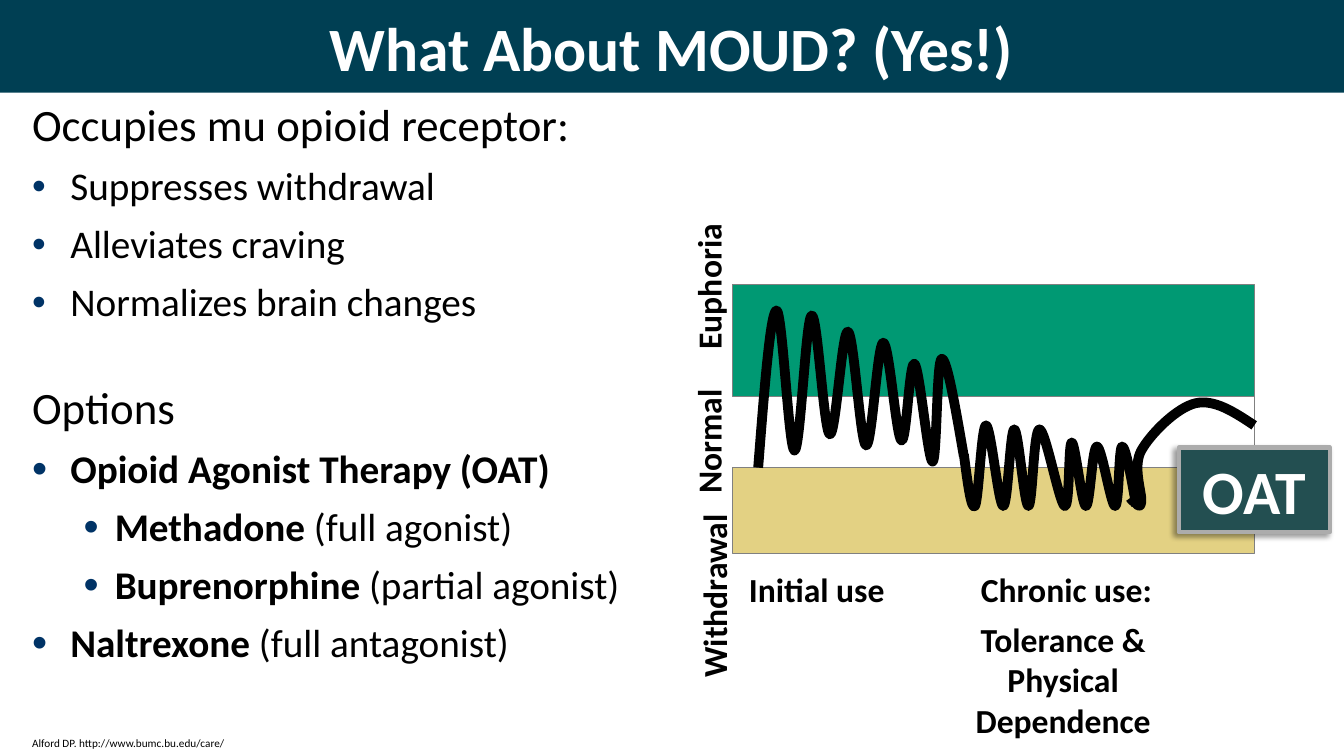
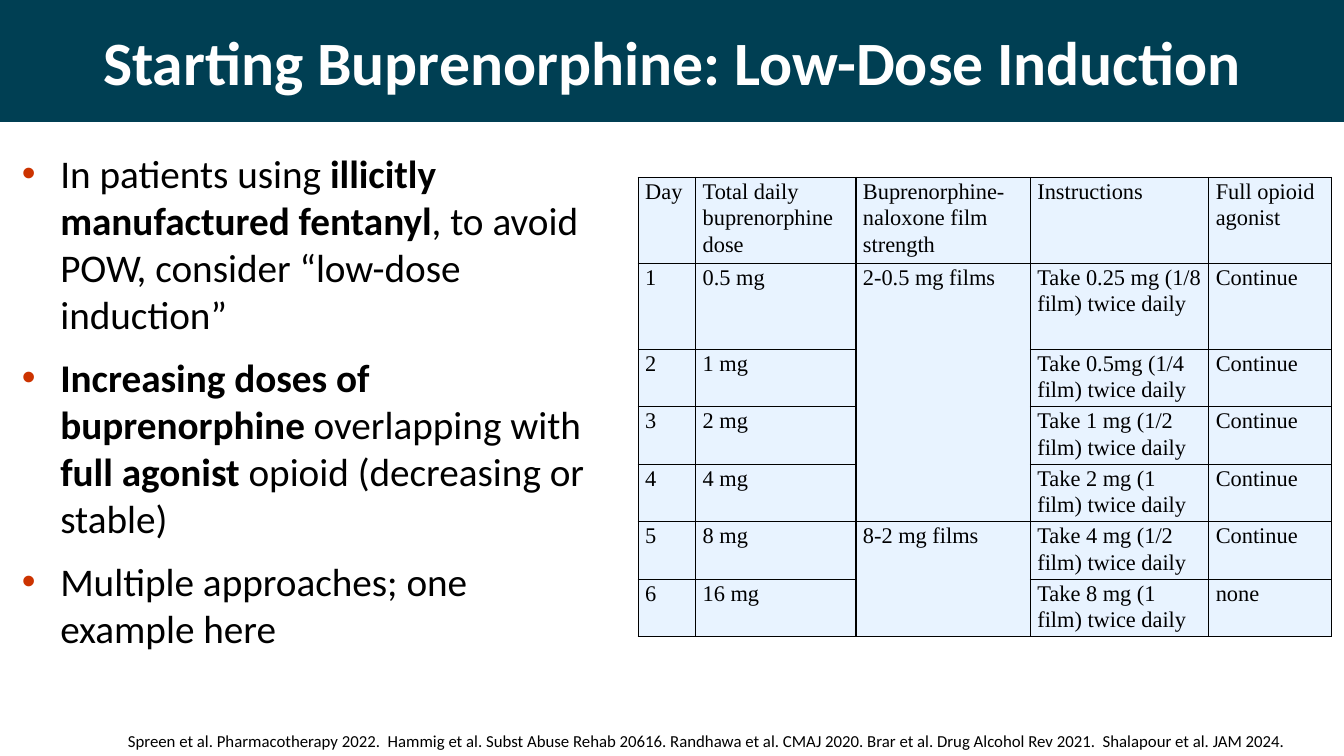
from lxml import etree
from pptx import Presentation
from pptx.dml.color import RGBColor
from pptx.enum.shapes import MSO_CONNECTOR, MSO_SHAPE
from pptx.enum.text import MSO_ANCHOR, PP_ALIGN
from pptx.oxml.ns import qn
from pptx.util import Pt

PX = 9144  # EMU in one px, 100 px to the inch
WIDE, HIGH = 1333, 750

NAVY = RGBColor(0x00, 0x3F, 0x53)
WHITE = RGBColor(0xFF, 0xFF, 0xFF)
BLACK = RGBColor(0x00, 0x00, 0x00)
GREEN = RGBColor(0x00, 0x99, 0x73)
SAND = RGBColor(0xE3, 0xD1, 0x83)
GREY = RGBColor(0x80, 0x80, 0x80)
SILVER = RGBColor(0xAC, 0xAC, 0xAC)
TEAL = RGBColor(0x23, 0x4F, 0x51)
BLUE = RGBColor(0x00, 0x33, 0x66)
RED = RGBColor(0xCC, 0x33, 0x00)
PALE = RGBColor(0xAD, 0xD6, 0xFF)

RECT = MSO_SHAPE.RECTANGLE
LINE = MSO_CONNECTOR.STRAIGHT
LEFT, CENTER = PP_ALIGN.LEFT, PP_ALIGN.CENTER
TOP, MIDDLE = MSO_ANCHOR.TOP, MSO_ANCHOR.MIDDLE

HEAD = {"size": Pt(44), "bold": True, "name": "Calibri"}
LABEL = {"size": Pt(24), "bold": True, "name": "Calibri"}
CELL = {"size": Pt(16), "bold": False, "name": "Times New Roman"}


def emu(*vals):
    return [round(v * PX) for v in vals]


def put(obj, attrs):
    for key, val in attrs.items():
        setattr(obj, key, val)


def node(top, tag, **attrs):
    return etree.SubElement(top, qn("a:" + tag), attrs)


# Text: asterisks switch bold on and off
def write(par, text, font, color=BLACK, **form):
    put(par, form)
    for i, part in enumerate(text.split("*")):
        if part:
            run = par.add_run()
            run.text = part
            put(run.font, font)
            run.font.color.rgb = color
            if i % 2:
                run.font.bold = True


def label(slide, box, text, font, wrap=False, turn=0, align=LEFT):
    shape = slide.shapes.add_textbox(*emu(*box))
    shape.rotation = turn
    shape.text_frame.word_wrap = wrap
    write(shape.text_frame.paragraphs[0], text, font, alignment=align)


def panel(slide, box, fill, edge=None, width=0.75):
    shape = slide.shapes.add_shape(RECT, *emu(*box))
    shape.shadow.inherit = False
    shape.fill.solid()
    shape.fill.fore_color.rgb = fill
    if edge is None:
        shape.line.fill.background()
    else:
        shape.line.color.rgb = edge
        shape.line.width = Pt(width)
    return shape


def caption(shape, text):
    put(shape.text_frame, {"vertical_anchor": MIDDLE, "word_wrap": True})
    write(shape.text_frame.paragraphs[0], text, HEAD, WHITE, alignment=CENTER)


def title(slide, wide, high, text):
    caption(panel(slide, (0, 0, wide, high), NAVY), text)


# Rows are (level, text, size, space before, bullet percent);
# level None has no bullet
def body(slide, box, rows, color, ratio):
    frame = slide.shapes.add_textbox(*emu(*box)).text_frame
    frame.word_wrap = True
    for i, (level, text, size, gap, pct) in enumerate(rows):
        par = frame.add_paragraph() if i else frame.paragraphs[0]
        font = {"size": Pt(size), "bold": False, "name": "Calibri"}
        write(par, text, font, line_spacing=ratio, space_before=Pt(gap))
        if level is None:
            continue
        par.level = level
        left, hang = emu(*((38, 38), (82, 31))[level])
        props = par._p.get_or_add_pPr()
        props.set("marL", str(left))
        props.set("indent", str(-hang))
        node(node(props, "buClr"), "srgbClr", val=str(color))
        node(props, "buSzPct", val=str(pct * 1000))
        node(props, "buFont", typeface="Arial")
        node(props, "buChar", char="•")


# Control points of the smooth curve from knot i to the next
def bend(pts, i):
    last = len(pts) - 1

    def lean(k, axis):
        return (pts[k + 1][axis] - pts[k - 1][axis]) / 6

    first, second = [], []
    for axis in (0, 1):
        a, d = pts[i][axis], pts[i + 1][axis]
        b = a + lean(i, axis) if i else None
        c = d - lean(i + 1, axis) if i + 1 < last else (b + d) / 2
        first.append((a + c) / 2 if b is None else b)
        second.append(c)
    return first, second


def curve(slide, left, top, knots):
    pts = [emu(left + x, top + y) for x, y in knots]
    pen = slide.shapes.build_freeform(*pts[0], scale=1.0)
    pen.add_line_segments(pts[1:], close=False)
    shape = pen.convert_to_shape()
    shape.shadow.inherit = False
    shape.fill.background()
    shape.line.color.rgb = BLACK
    shape.line.width = Pt(7)
    # Turn each straight step into a cubic one
    for i, step in enumerate(list(shape._element.iter(qn("a:lnTo")))):
        step.tag = qn("a:cubicBezTo")
        for k, (x, y) in enumerate(bend(pts, i)):
            spot = node(step, "pt", x=str(round(x - shape.left)),
                        y=str(round(y - shape.top)))
            step.insert(k, spot)


# Knots are relative to the top left of the diagram
EARLY = [(25, 182), (43, 26), (61, 165), (78, 31), (96, 149), (114, 47),
         (132, 160), (149, 58), (167, 155), (180, 79), (198, 176),
         (207, 74), (229, 171)]
LATE = [(229, 169), (240, 220), (251, 140), (268, 220), (279, 144),
        (293, 220), (304, 144), (329, 220), (336, 157), (350, 220),
        (361, 161), (379, 220), (386, 161), (400, 220)]
STEADY = [(394, 212), (398, 216), (405, 216), (405, 165), (459, 118),
          (517, 140)]


def diagram(slide, left, top, wide):
    # Bands and right edge
    panel(slide, (left, top, wide, 111), GREEN, GREY)
    panel(slide, (left, top + 182, wide, 85), SAND, GREY)
    right = left + wide
    edge = slide.shapes.add_connector(
        LINE, *emu(right, top + 102, right, top + 261))
    edge.line.color.rgb = GREY
    edge.line.width = Pt(0.75)
    node(edge._element.spPr, "effectLst")

    for knots in (EARLY, LATE, STEADY):
        curve(slide, left, top, knots)

    # Badge with soft shadow
    badge = panel(slide, (left + 442, top + 162, 150, 84), TEAL, SILVER, 3)
    caption(badge, "OAT")
    glow = node(badge._element.spPr.find(qn("a:effectLst")), "outerShdw",
                blurRad=str(Pt(4)), dist=str(Pt(3)), dir="8100000",
                algn="tr", rotWithShape="0")
    node(node(glow, "srgbClr", val="000000"), "alpha", val="40000")

    # Stages below
    for x, wide, text in ((236, 191, "Chronic use:"),
                          (6, 156, "Initial use")):
        label(slide, (left + x, top + 277, wide, 50), text, LABEL)
    label(slide, (left + 204, top + 327, 247, 131),
          "Tolerance & Physical Dependence", LABEL, True, align=CENTER)

    # States beside
    for x, y, wide, text in ((-111, 283, 184, "Withdrawal"),
                             (-87, 130, 125, "Normal"),
                             (-97, -23, 145, "Euphoria")):
        label(slide, (left + x, top + y, wide, 50), text, LABEL, turn=270)


COLS = [57, 159, 173, 177, 122]
HEADS = ["Day", "Total daily buprenorphine dose",
         "Buprenorphine-naloxone film strength", "Instructions",
         "Full opioid agonist"]
DOSES = [
    ["1", "0.5 mg", "2-0.5 mg films", "Take 0.25 mg (1/8 film) twice daily",
     "Continue"],
    ["2", "1 mg", "", "Take 0.5mg (1/4 film) twice daily", "Continue"],
    ["3", "2 mg", "", "Take 1 mg (1/2 film) twice daily", "Continue"],
    ["4", "4 mg", "", "Take 2 mg (1 film) twice daily", "Continue"],
    ["5", "8 mg", "8-2 mg films", "Take 4 mg (1/2 film) twice daily",
     "Continue"],
    ["6", "16 mg", "", "Take 8 mg (1 film) twice daily", "none"],
]


def style(cell):
    put(cell, dict(zip(("margin_left", "margin_top", "margin_right",
                        "margin_bottom"), emu(7, 0, 7, 0))))
    cell.vertical_anchor = TOP
    cell.fill.solid()
    cell.fill.fore_color.rgb = PALE
    props = cell._tc.get_or_add_tcPr()
    node(props.find(".//" + qn("a:srgbClr")), "alpha", val="27000")
    for i, side in enumerate("LRTB"):
        line = node(props, "ln" + side, w=str(Pt(1)))
        node(node(line, "solidFill"), "srgbClr", val=str(BLACK))
        props.insert(i, line)


def grid(slide, left, top):
    rows = [HEADS] + DOSES
    highs = [85, 85] + [57] * 5
    table = slide.shapes.add_table(
        len(rows), len(COLS),
        *emu(left, top, sum(COLS), sum(highs))).table
    put(table, {"first_row": False, "horz_banding": False})
    for col, wide in zip(table.columns, COLS):
        col.width = wide * PX
    for r, (row, high) in enumerate(zip(rows, highs)):
        table.rows[r].height = high * PX
        for c, text in enumerate(row):
            cell = table.cell(r, c)
            style(cell)
            write(cell.text_frame.paragraphs[0], text, CELL,
                  line_spacing=1.07, space_after=Pt(8))
    for first, last in ((1, 4), (5, 6)):
        table.cell(first, 2).merge(table.cell(last, 2))


def effects(slide):
    title(slide, WIDE, 92, "What About MOUD? (Yes!)")
    body(slide, (22, 97, 856, 592), [
        (None, "Occupies mu opioid receptor:", 32, 0, 100),
        (0, "Suppresses withdrawal", 28, 11.2, 100),
        (0, "Alleviates craving", 28, 11.2, 100),
        (0, "Normalizes brain changes", 28, 11.2, 100),
        (None, "Options", 32, 43, 100),
        (0, "*Opioid Agonist Therapy (OAT)*", 28, 11.2, 110),
        (1, "*Methadone* (full agonist)", 28, 11.2, 110),
        (1, "*Buprenorphine* (partial agonist)", 28, 11.2, 110),
        (0, "*Naltrexone* (full antagonist)", 28, 11.2, 110),
    ], BLUE, 0.9)
    diagram(slide, 727, 282, 517)
    label(slide, (22, 726, 218, 24), "Alford DP. http://www.bumc.bu.edu/care/",
          {"size": Pt(8), "name": "Calibri"})


def dosing(slide):
    body(slide, (12, 143, 587, 628), [
        (0, "In patients using *illicitly manufactured fentanyl*, to avoid "
            "POW, consider “low-dose induction”", 28, 0, 100),
        (0, "*Increasing doses of buprenorphine* overlapping with"
            "* full agonist* opioid (decreasing or stable)", 28, 11.2, 100),
        (0, "Multiple approaches; one example here", 28, 11.2, 100),
    ], RED, 1.0)
    label(slide, (117, 720, 1182, 30),
          "Spreen et al. Pharmacotherapy 2022.  Hammig et al. Subst Abuse "
          "Rehab 20616. Randhawa et al. CMAJ 2020. Brar et al. Drug Alcohol "
          "Rev 2021.  Shalapour et al. JAM 2024.",
          {"size": Pt(12), "name": "Calibri"}, True)
    grid(slide, 633, 176)
    title(slide, 1335, 121, "Starting Buprenorphine: Low-Dose Induction")


def main():
    deck = Presentation()
    deck.slide_width, deck.slide_height = emu(WIDE, HIGH)
    for draw in (effects, dosing):
        draw(deck.slides.add_slide(deck.slide_layouts[6]))
    deck.save("out.pptx")


if __name__ == "__main__":
    main()
